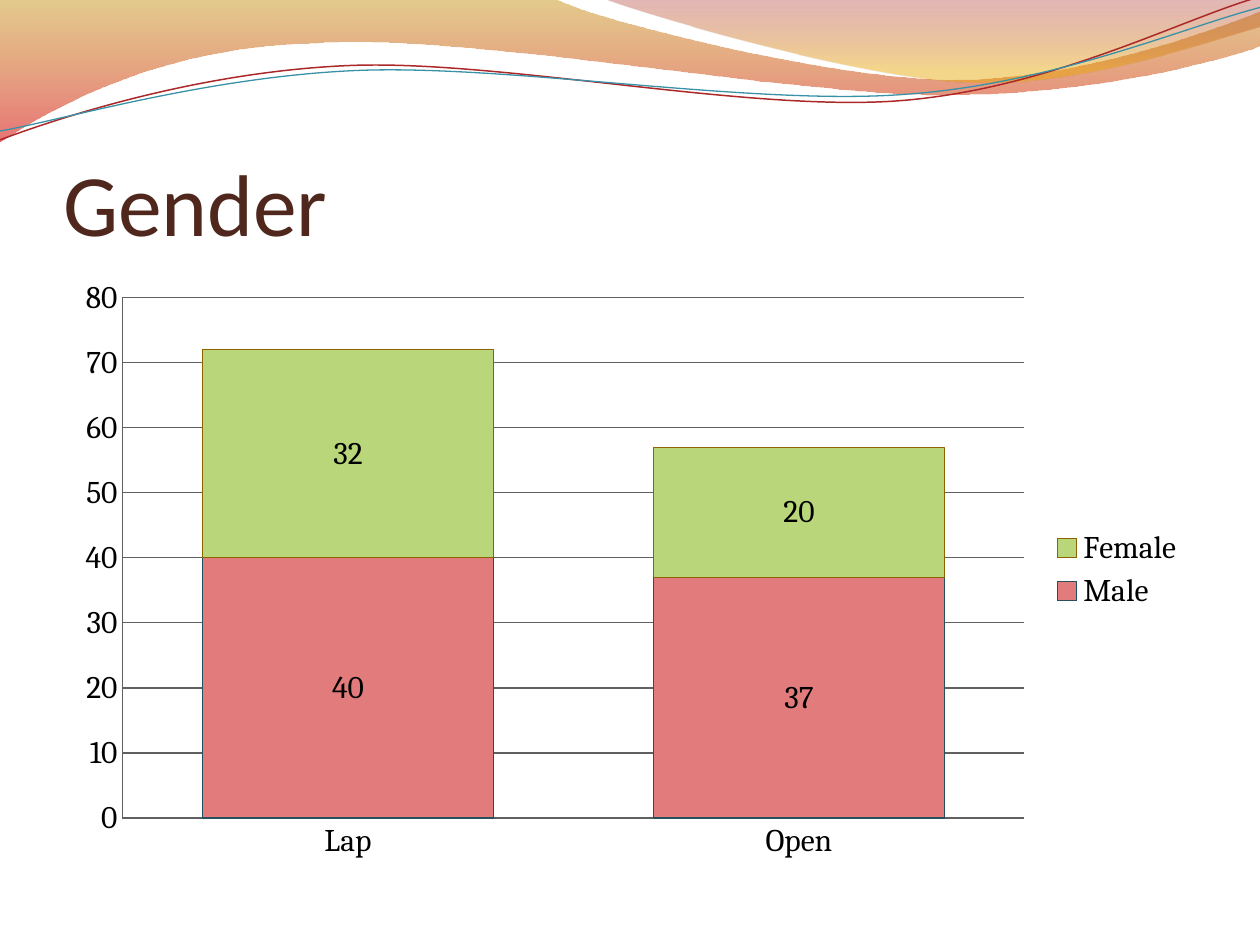
from dataclasses import dataclass
from math import cos, radians, sin

from lxml import etree
from pptx import Presentation
from pptx.chart.data import CategoryChartData
from pptx.dml.color import RGBColor
from pptx.enum.chart import XL_CHART_TYPE, XL_LABEL_POSITION, XL_LEGEND_POSITION, XL_TICK_MARK
from pptx.enum.text import MSO_ANCHOR, PP_ALIGN
from pptx.oxml.ns import qn
from pptx.util import Inches, Pt

STACKED = XL_CHART_TYPE.COLUMN_STACKED
LABEL_CENTER = XL_LABEL_POSITION.CENTER
LEGEND_RIGHT = XL_LEGEND_POSITION.RIGHT
NO_TICK = XL_TICK_MARK.NONE
BOTTOM = MSO_ANCHOR.BOTTOM
LEFT = PP_ALIGN.LEFT
TITLE_ONLY = 5
CURVE_TILT = -2.7


@dataclass(frozen=True)
class Theme:
    title_font: str = "Calibri"
    chart_font: str = "Cambria"
    title_size: int = 50
    chart_size: int = 18
    title: str = "4F271C"
    text: str = "000000"
    axis: str = "606060"
    male: str = "E17B7C"
    male_edge: str = "25505C"
    female: str = "B9D77A"
    female_edge: str = "8B6300"
    red_line: str = "AC2829"
    teal_line: str = "3891A7"
    # Gradient stops: position, colour, opacity in percent
    wide_wave: tuple = ((0, "C38B00", 45), (1, "D60305", 55))
    right_wave: tuple = ((0, "A11112", 30), (0.8, "E9A600", 45))


THEME = Theme()

# Wave outlines in inches: a pair is a straight step, six numbers are a curve
WIDE_WAVE = [
    (0, 0), (4.4, -0.01),
    (4.76, 0.17, 6.64, 0.63, 7.58, 0.63), (8.53, 0.63, 9.58, 0.26, 10, 0.09),
    (10.01, 0.36),
    (9.83, 0.44, 8.7, 0.76, 7.46, 0.75), (6.22, 0.75, 3.82, 0.28, 2.57, 0.34),
    (1.29, 0.36, 0.46, 0.83, -0.01, 1.13), (0, 0),
]
RIGHT_WAVE = [
    (4.79, -0.01),
    (5.09, 0.11, 6.82, 0.62, 7.69, 0.65), (8.56, 0.69, 9.61, 0.32, 10, 0.21),
    (10, 0), (4.79, -0.01),
]
RED_CURVE = [
    (0, 1.11),
    (0.48, 0.93, 1.58, 0.57, 2.77, 0.52), (3.95, 0.47, 5.93, 0.89, 7.13, 0.8),
    (8.33, 0.71, 9.38, 0.15, 9.98, -0.02),
]
TEAL_CURVE = [
    (0, 1.04),
    (0.47, 0.96, 1.64, 0.61, 2.83, 0.56), (4.03, 0.51, 5.97, 0.84, 7.17, 0.75),
    (8.36, 0.67, 9.41, 0.21, 10, 0.06),
]


def rgb(value):
    return RGBColor.from_string(value)


def turn(segment, center, degrees):
    """Turn every point of a segment clockwise about a center."""
    c, s = cos(radians(degrees)), sin(radians(degrees))
    turned = []
    for x, y in zip(segment[::2], segment[1::2]):
        dx, dy = x - center[0], y - center[1]
        turned += [center[0] + dx * c - dy * s, center[1] + dx * s + dy * c]
    return turned


def add_outline(shapes, segments, close):
    corners = [(Inches(x), Inches(y)) for segment in segments
               for x, y in zip(segment[::2], segment[1::2])]
    builder = shapes.build_freeform(*corners[0])
    builder.add_line_segments(corners[1:], close=close)
    outline = builder.convert_to_shape()
    outline.shadow.inherit = False

    # Merge each three steps of a curve into one cubic segment
    steps = iter(list(outline.element.spPr.iter(qn("a:lnTo"))))
    for segment in segments[1:]:
        first = next(steps)
        if len(segment) == 6:
            cubic = etree.Element(qn("a:cubicBezTo"))
            first.addprevious(cubic)
            for step in (first, next(steps), next(steps)):
                cubic.append(step[0])
                step.getparent().remove(step)
    return outline


def add_wave(shapes, segments, stops):
    wave = add_outline(shapes, segments, close=True)
    wave.line.fill.background()
    wave.fill.gradient()
    wave.fill.gradient_angle = 270
    for stop, (position, color, _) in zip(wave.fill.gradient_stops, stops):
        stop.position = position
        stop.color.rgb = rgb(color)
    # Opacity of each gradient stop
    tints = wave.element.spPr.find(qn("a:gradFill")).iter(qn("a:srgbClr"))
    for tint, (_, _, opacity) in zip(tints, stops):
        etree.SubElement(tint, qn("a:alpha")).set("val", str(opacity * 1000))


def add_curve(shapes, segments, center, color, width):
    level = [turn(segment, center, -CURVE_TILT) for segment in segments]
    curve = add_outline(shapes, level, close=False)
    curve.rotation = CURVE_TILT
    curve.fill.background()
    set_line(curve.line, color, width)


def set_line(line, color, width=0.75):
    line.color.rgb = rgb(color)
    line.width = Pt(width)


def set_font(font, *, name, size, color):
    font.name = name
    font.size = Pt(size)
    font.color.rgb = rgb(color)
    font.bold = False


def write_text(frame, text, *, align=LEFT, anchor=BOTTOM, **font_format):
    frame.word_wrap = True
    frame.vertical_anchor = anchor
    frame.margin_left = frame.margin_right = frame.margin_bottom = 0
    frame.margin_top = Inches(0.05)
    paragraph = frame.paragraphs[0]
    paragraph.alignment = align
    run = paragraph.add_run()
    run.text = text
    set_font(run.font, **font_format)


def add_gender_chart(slide):
    counts = CategoryChartData()
    counts.categories = ["Lap", "Open"]
    counts.add_series("Male", (40, 37))
    counts.add_series("Female", (32, 20))
    chart = slide.shapes.add_chart(
        STACKED, Inches(0.5), Inches(2.12), Inches(9), Inches(4.8), counts).chart
    set_font(chart.font, name=THEME.chart_font, size=THEME.chart_size, color=THEME.text)
    chart.has_title = False
    chart.has_legend = True
    chart.legend.position = LEGEND_RIGHT
    chart.legend.include_in_layout = False

    # Axes
    for axis in (chart.category_axis, chart.value_axis):
        axis.major_tick_mark = axis.minor_tick_mark = NO_TICK
        set_line(axis.format.line, THEME.axis)
    set_line(chart.value_axis.major_gridlines.format.line, THEME.axis)

    # Stacked columns
    columns = chart.plots[0]
    columns.gap_width, columns.overlap = 55, 100
    columns.vary_by_categories = False
    colors = ((THEME.male, THEME.male_edge), (THEME.female, THEME.female_edge))
    for series, (color, edge) in zip(columns.series, colors):
        series.format.fill.solid()
        series.format.fill.fore_color.rgb = rgb(color)
        set_line(series.format.line, edge)
        series.data_labels.show_value = True
        series.data_labels.position = LABEL_CENTER


def main():
    deck = Presentation()
    deck.slide_width, deck.slide_height = Inches(10), Inches(7.5)
    slide = deck.slides.add_slide(deck.slide_layouts[TITLE_ONLY])

    # Wave header
    add_wave(slide.shapes, WIDE_WAVE, THEME.wide_wave)
    add_wave(slide.shapes, RIGHT_WAVE, THEME.right_wave)
    curves = slide.shapes.add_group_shape()
    add_curve(curves.shapes, RED_CURVE, (4.99, 0.58), THEME.red_line, 0.85)
    add_curve(curves.shapes, TEAL_CURVE, (5, 0.59), THEME.teal_line, 0.75)

    # Title, in front of the waves
    title = slide.shapes.title
    curves.element.addnext(title.element)
    title.left, title.top = Inches(0.5), Inches(0.77)
    title.width, title.height = Inches(9), Inches(1.25)
    write_text(title.text_frame, "Gender", name=THEME.title_font,
               size=THEME.title_size, color=THEME.title)

    add_gender_chart(slide)
    deck.save("out.pptx")


if __name__ == "__main__":
    main()
